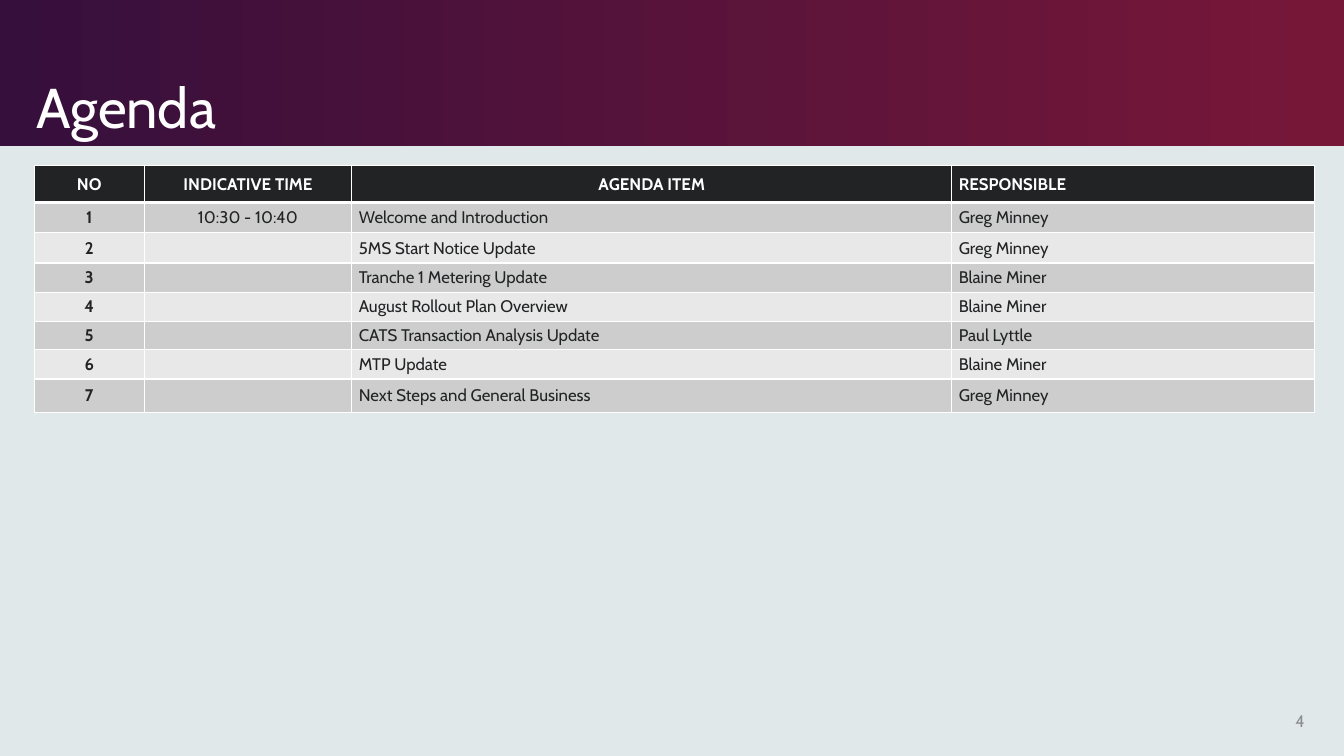
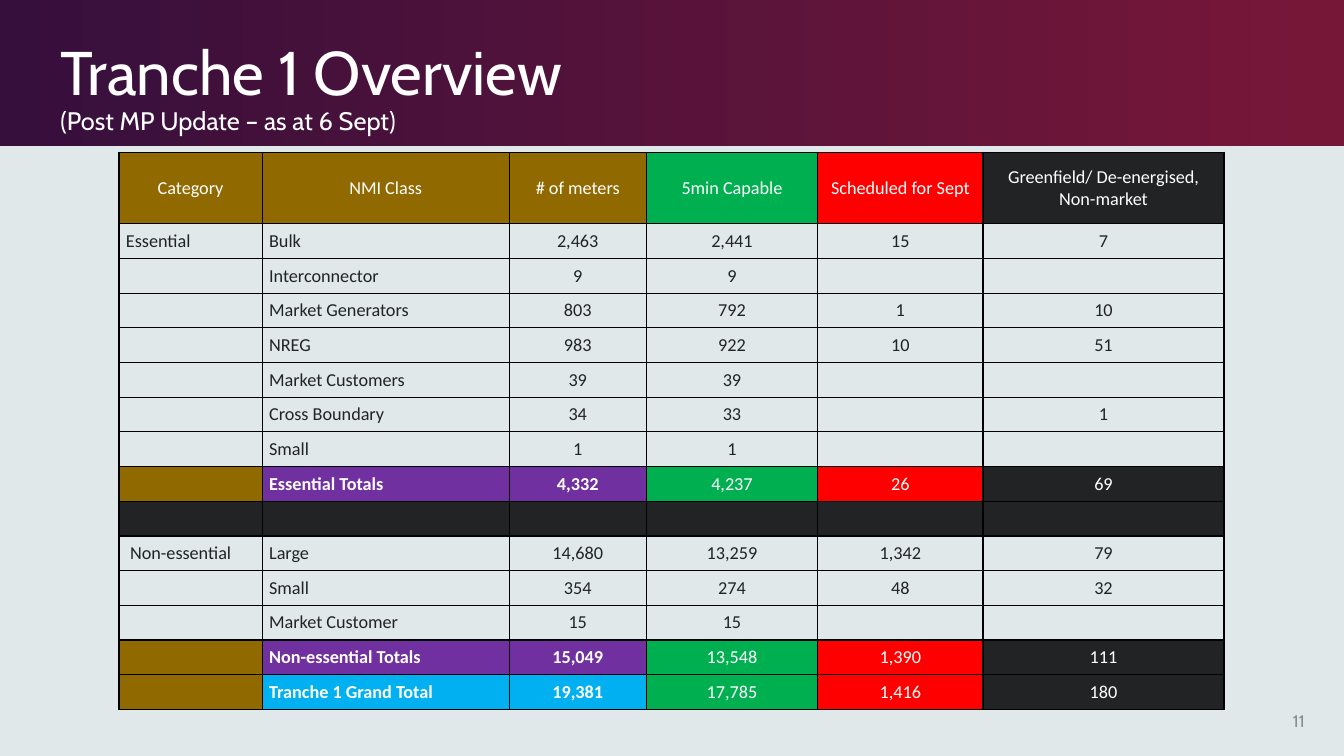
from dataclasses import dataclass
from typing import Optional

from lxml import etree
from pptx import Presentation
from pptx.dml.color import RGBColor
from pptx.enum.shapes import MSO_SHAPE, PP_PLACEHOLDER
from pptx.enum.text import MSO_ANCHOR, MSO_AUTO_SIZE, PP_ALIGN
from pptx.oxml.ns import qn
from pptx.util import Inches, Pt

LEFT, CENTER, RIGHT = PP_ALIGN.LEFT, PP_ALIGN.CENTER, PP_ALIGN.RIGHT
MIDDLE, BOTTOM = MSO_ANCHOR.MIDDLE, MSO_ANCHOR.BOTTOM
NO_AUTOFIT = MSO_AUTO_SIZE.NONE
RECTANGLE = MSO_SHAPE.RECTANGLE
TITLE = PP_PLACEHOLDER.TITLE

BACKGROUND = RGBColor(0xE0, 0xE8, 0xEA)
PLUM = RGBColor(0x36, 0x0F, 0x3C)
WINE = RGBColor(0x77, 0x17, 0x38)
WHITE = RGBColor(0xFF, 0xFF, 0xFF)
BLACK = RGBColor(0x00, 0x00, 0x00)
INK = RGBColor(0x22, 0x23, 0x24)
GREY = RGBColor(0x8D, 0x8D, 0x8E)
DARK_STRIPE = RGBColor(0xCD, 0xCD, 0xCD)
LIGHT_STRIPE = RGBColor(0xE8, 0xE8, 0xE8)
BROWN = RGBColor(0x90, 0x69, 0x00)
GREEN = RGBColor(0x00, 0xB0, 0x50)
RED = RGBColor(0xFF, 0x00, 0x00)
PURPLE = RGBColor(0x70, 0x30, 0xA0)
BLUE = RGBColor(0x00, 0xB0, 0xF0)

TITLE_FONT = "Cabin"
TABLE_FONT = "Calibri"
SLIDE_WIDTH = 13.33
BAND_HEIGHT = 1.45

AGENDA_HEADER = ("NO", "INDICATIVE TIME", "AGENDA ITEM", "RESPONSIBLE")
AGENDA_ITEMS = (
    ("10:30 - 10:40", "Welcome and Introduction", "Greg Minney"),
    ("", "5MS Start Notice Update", "Greg Minney"),
    ("", "Tranche 1 Metering Update", "Blaine Miner"),
    ("", "August Rollout Plan Overview", "Blaine Miner"),
    ("", "CATS Transaction Analysis Update", "Paul Lyttle"),
    ("", "MTP Update", "Blaine Miner"),
    ("", "Next Steps and General Business", "Greg Minney"),
)

METER_HEADER = ("Category", "NMI Class", "# of meters", "5min Capable",
                "Scheduled for Sept", "Greenfield/ De-energised, Non-market")
METER_ROWS = (
    ("Essential", "Bulk", "2,463", "2,441", "15", "7"),
    ("", "Interconnector", "9", "9", "", ""),
    ("", "Market Generators", "803", "792", "1", "10"),
    ("", "NREG", "983", "922", "10", "51"),
    ("", "Market Customers", "39", "39", "", ""),
    ("", "Cross Boundary", "34", "33", "", "1"),
    ("", "Small", "1", "1", "", ""),
    ("", "Essential Totals", "4,332", "4,237", "26", "69"),
    ("", "", "", "", "", ""),
    (" Non-essential", "Large", "14,680", "13,259", "1,342", "79"),
    ("", "Small", "354", "274", "48", "32"),
    ("", "Market Customer", "15", "15", "", ""),
    ("", "Non-essential Totals", "15,049", "13,548", "1,390", "111"),
    ("", "Tranche 1 Grand Total", "19,381", "17,785", "1,416", "180"),
)
TOTAL_ACCENTS = {
    "Essential Totals": PURPLE,
    "Non-essential Totals": PURPLE,
    "Tranche 1 Grand Total": BLUE,
}


@dataclass(frozen=True)
class Box:
    left: float
    top: float
    width: float
    height: float

    def lengths(self) -> tuple:
        return tuple(map(Inches, (self.left, self.top, self.width, self.height)))


@dataclass(frozen=True)
class CellStyle:
    text: str
    align: PP_ALIGN = LEFT
    fill: Optional[RGBColor] = None
    color: RGBColor = INK
    bold: bool = False
    top: float = 1
    bottom: float = 1


@dataclass(frozen=True)
class TableStyle:
    box: Box
    widths: tuple
    heights: tuple
    font: str
    size: float
    border: RGBColor
    spacing: float = 0


def place(sp, box: Box) -> None:
    sp.left, sp.top, sp.width, sp.height = box.lengths()


def set_font(font, name: str, size: float, color: RGBColor, bold: bool = False) -> None:
    font.name = name
    font.size = Pt(size)
    font.color.rgb = color
    font.bold = bold


def add_band(slide) -> None:
    sp = slide.shapes.add_shape(RECTANGLE, *Box(0, 0, SLIDE_WIDTH, BAND_HEIGHT).lengths())
    sp.shadow.inherit = False
    sp.line.fill.background()
    sp.fill.gradient()
    sp.fill.gradient_angle = 0
    for stop, color, position in zip(sp.fill.gradient_stops, (PLUM, WINE), (0, 0.99)):
        stop.color.rgb = color
        stop.position = position
    slide.shapes.element.insert(2, sp.element)


def add_title(slide, box: Box, title: str, size: float, subtitle: str = "") -> None:
    sp = slide.shapes.title
    place(sp, box)
    tf = sp.text_frame
    tf.auto_size = NO_AUTOFIT
    tf.vertical_anchor = BOTTOM
    p = tf.paragraphs[0]
    p.alignment = LEFT
    p.line_spacing = 0.9
    set_font(p.font, TITLE_FONT, size, WHITE)
    p.add_run().text = title
    if subtitle:
        p.add_line_break()
        r = p.add_run()
        r.text = subtitle
        r.font.size = Pt(18.1)


def add_page_number(slide, number: int) -> None:
    sp = slide.shapes.add_textbox(*Box(12.41, 6.95, 0.63, 0.4).lengths())
    tf = sp.text_frame
    tf.word_wrap = True
    tf.vertical_anchor = MIDDLE
    p = tf.paragraphs[0]
    p.text = str(number)
    p.alignment = RIGHT
    set_font(p.font, TITLE_FONT, 12, GREY)


def add_border(cell, side: str, color: RGBColor, width: float) -> None:
    ln = etree.SubElement(cell._tc.get_or_add_tcPr(), qn(f"a:ln{side}"), w=str(Pt(width)))
    fill = etree.SubElement(ln, qn("a:solidFill"))
    etree.SubElement(fill, qn("a:srgbClr"), val=str(color))


def format_cell(cell, content: CellStyle, style: TableStyle) -> None:
    for side, width in (("L", 1), ("R", 1), ("T", content.top), ("B", content.bottom)):
        add_border(cell, side, style.border, width)
    if content.fill is None:
        cell.fill.background()
    else:
        cell.fill.solid()
        cell.fill.fore_color.rgb = content.fill
    cell.margin_left = cell.margin_right = Inches(0.07)
    cell.margin_top = cell.margin_bottom = 0
    cell.vertical_anchor = MIDDLE
    p = cell.text_frame.paragraphs[0]
    if content.text:
        p.text = content.text
    p.alignment = content.align
    p.space_before = p.space_after = Pt(style.spacing)
    set_font(p.font, style.font, style.size, content.color, content.bold)


def add_table(slide, style: TableStyle, rows: list) -> None:
    table = slide.shapes.add_table(len(rows), len(style.widths), *style.box.lengths()).table
    table.first_row = False
    table.horz_banding = False
    for column, width in zip(table.columns, style.widths):
        column.width = Inches(width)
    for row, height, contents in zip(table.rows, style.heights, rows):
        row.height = Inches(height)
        for cell, content in zip(row.cells, contents):
            format_cell(cell, content, style)


def agenda_rows() -> list:
    rows = [[CellStyle(text, LEFT if text == "RESPONSIBLE" else CENTER, INK, WHITE, True, bottom=3)
             for text in AGENDA_HEADER]]
    for number, item in enumerate(AGENDA_ITEMS, start=1):
        fill = DARK_STRIPE if number % 2 else LIGHT_STRIPE
        top = 3 if number == 1 else 1
        rows.append([CellStyle(text, CENTER if i < 2 else LEFT, fill, bold=i == 0, top=top)
                     for i, text in enumerate((str(number), *item))])
    return rows


def meter_rows() -> list:
    header_fills = (BROWN, BROWN, BROWN, GREEN, RED, INK)
    rows = [[CellStyle(text, CENTER, fill, WHITE)
             for text, fill in zip(METER_HEADER, header_fills)]]
    for texts in METER_ROWS:
        accent = TOTAL_ACCENTS.get(texts[1])
        if accent is not None:
            fills = (BROWN, accent, accent, GREEN, RED, INK)
        else:
            fills = (None if any(texts) else INK,) * len(texts)
        rows.append([CellStyle(text, LEFT if i < 2 else CENTER, fill,
                               INK if accent is None else WHITE,
                               accent is not None and i in (1, 2))
                     for i, (text, fill) in enumerate(zip(texts, fills))])
    return rows


def prepare_layout(prs):
    background = prs.slide_master.background.fill
    background.solid()
    background.fore_color.rgb = BACKGROUND
    layout = prs.slide_layouts[5]
    for sp in list(layout.placeholders):
        if sp.placeholder_format.type != TITLE:
            layout.shapes.element.remove(sp.element)
    return layout


def add_slide(prs, layout, number: int):
    slide = prs.slides.add_slide(layout)
    add_band(slide)
    add_page_number(slide, number)
    return slide


def main() -> None:
    prs = Presentation()
    prs.slide_width, prs.slide_height = Inches(SLIDE_WIDTH), Inches(7.5)
    layout = prepare_layout(prs)

    agenda = add_slide(prs, layout, 4)
    add_title(agenda, Box(0.26, 0.15, 9.84, 1.3), "Agenda", 40)
    add_table(agenda, TableStyle(
        Box(0.34, 1.64, 12.7, 2.45), (1.09, 2.06, 5.95, 3.6),
        (0.37, 0.3, 0.3, 0.29, 0.29, 0.28, 0.29, 0.33), TITLE_FONT, 12, WHITE, 1),
        agenda_rows())

    overview = add_slide(prs, layout, 11)
    add_title(overview, Box(0.5, 0.1, 8.97, 1.3), "Tranche 1 Overview", 44,
              "(Post MP Update – as at 6 Sept)")
    box, header_height, count = Box(1.18, 1.51, 10.96, 5.53), 0.71, len(METER_ROWS)
    row_height = (box.height - header_height) / count
    add_table(overview, TableStyle(
        box, (1.42, 2.45, 1.36, 1.7, 1.64, 2.39),
        (header_height, *[row_height] * count), TABLE_FONT, 13, BLACK), meter_rows())

    prs.save("out.pptx")


if __name__ == "__main__":
    main()
